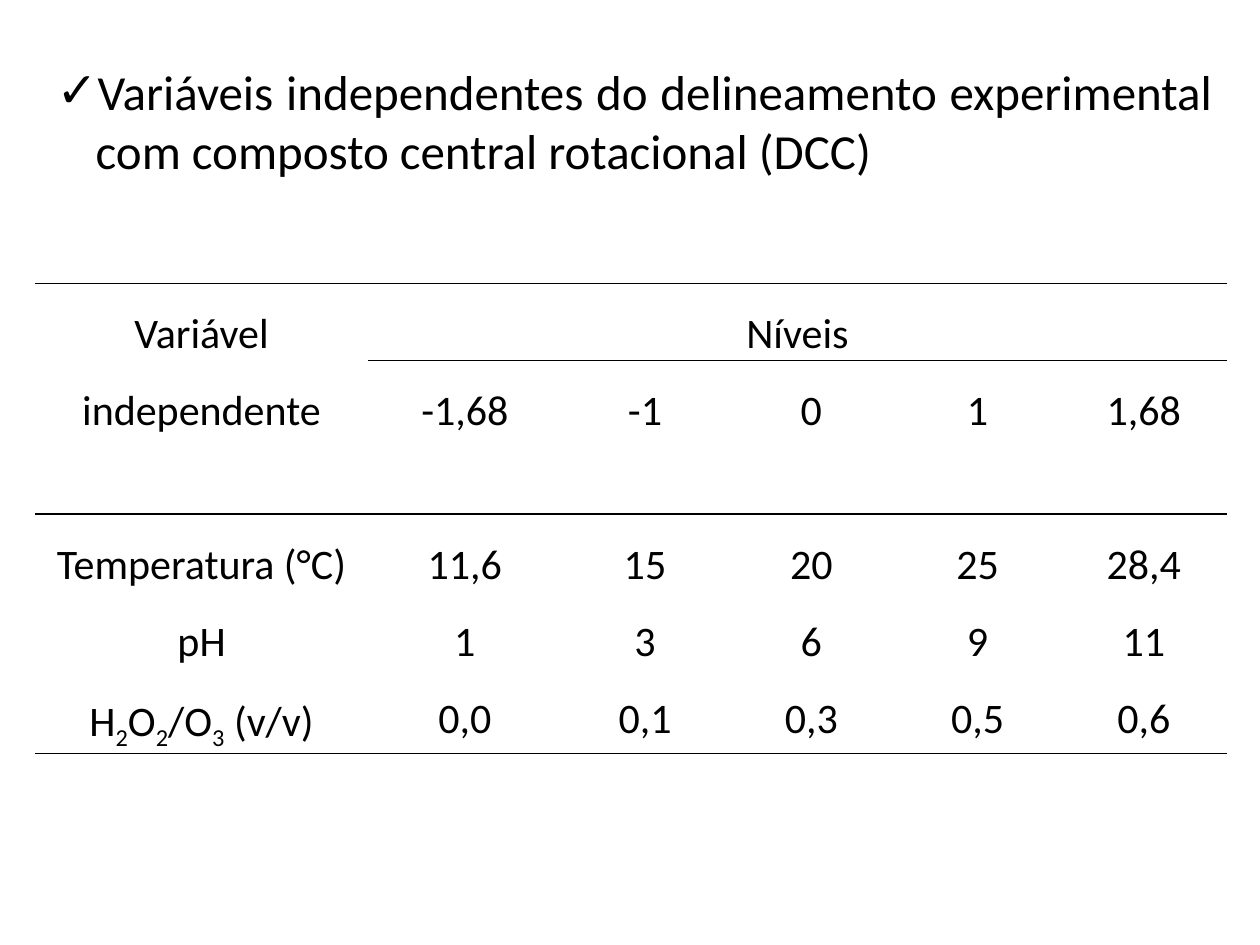
from lxml.etree import SubElement as Sub
from pptx import Presentation
from pptx.dml.color import RGBColor
from pptx.enum.text import MSO_ANCHOR as Anchor, PP_ALIGN as Align
from pptx.oxml.ns import qn
from pptx.util import Inches, Pt

BLACK = RGBColor(0, 0, 0)
FONT = "Calibri"
HEAD = "Variáveis independentes do delineamento experimental com composto central rotacional (DCC)"
ROWS = [
    ["Variável independente", "Níveis", "", "", "", ""],
    ["", "-1,68", "-1", "0", "1", "1,68"],
    ["Temperatura (°C)", "11,6", "15", "20", "25", "28,4"],
    ["pH", "1", "3", "6", "9", "11"],
    ["H_2_O_2_/O_3_ (v/v)", "0,0", "0,1", "0,3", "0,5", "0,6"],
]
WIDE = [2.64, 1.54] + [1.32] * 4
HIGH = [0.37, 0.41] + [0.37] * 3


def add_runs(para, text, size):
    """Write text, with each part between underscores as a subscript."""
    for i, part in enumerate(text.split("_")):
        run = para.add_run()
        run.text = part
        font = run.font
        font.name, font.size, font.bold = FONT, Pt(size), False
        font.color.rgb = BLACK
        if i % 2:
            run._r.get_or_add_rPr().set("baseline", "-25000")


def rule(cell, tags):
    """Draw the cell's sides named in tags and clear the others."""
    props = cell._tc.get_or_add_tcPr()
    for tag in ("lnL", "lnR", "lnT", "lnB"):
        line = Sub(props, qn("a:" + tag), w=str(Pt(1)))
        if tag in tags:
            fill = Sub(line, qn("a:solidFill"))
            Sub(fill, qn("a:srgbClr"), val=str(BLACK))
        else:
            Sub(line, qn("a:noFill"))


prs = Presentation()
prs.slide_width, prs.slide_height = Inches(10), Inches(7.5)
slide = prs.slides.add_slide(prs.slide_layouts[1])
title = slide.shapes.title._element
title.getparent().remove(title)

# Heading
body = slide.placeholders[1]
body.left, body.top = Inches(0.35), Inches(0.44)
body.width, body.height = Inches(9.37), Inches(3.57)
para = body.text_frame.paragraphs[0]
para.level = 1
para.alignment = Align.JUSTIFY
para.space_before, para.space_after = Pt(0), Pt(1.5)
props = para._p.get_or_add_pPr()
props.set("marL", str(Inches(0.31)))
props.set("indent", str(-Inches(0.31)))
Sub(props, qn("a:buFont"), typeface=FONT)
Sub(props, qn("a:buChar"), char="✓")
add_runs(para, HEAD, 28)

# Table of levels
table = slide.shapes.add_table(
    len(ROWS), len(WIDE), Inches(0.28), Inches(2.25), Inches(9.45), Inches(2.75)
).table
table.first_row = table.horz_banding = False
for col, width in zip(table.columns, WIDE):
    col.width = Inches(width)
for row, height in zip(table.rows, HIGH):
    row.height = Inches(height)
table.cell(0, 0).merge(table.cell(1, 0))
table.cell(0, 1).merge(table.cell(0, 5))

for r, texts in enumerate(ROWS):
    for c, text in enumerate(texts):
        cell = table.cell(r, c)
        cell.margin_left = cell.margin_right = Inches(0.06)
        cell.margin_top = cell.margin_bottom = 0
        cell.vertical_anchor = Anchor.TOP
        tags = []
        if r in (0, 2) or (r == 1 and c):
            tags.append("lnT")
        if r in (1, 4) or (r == 0 and c):
            tags.append("lnB")
        if (r, c) == (0, 0):
            tags.append("lnB")
        rule(cell, tags)
        cell.fill.background()
        if text:
            para = cell.text_frame.paragraphs[0]
            para.alignment = Align.CENTER
            para.line_spacing = 1.5
            add_runs(para, text, 24)

prs.save("out.pptx")
